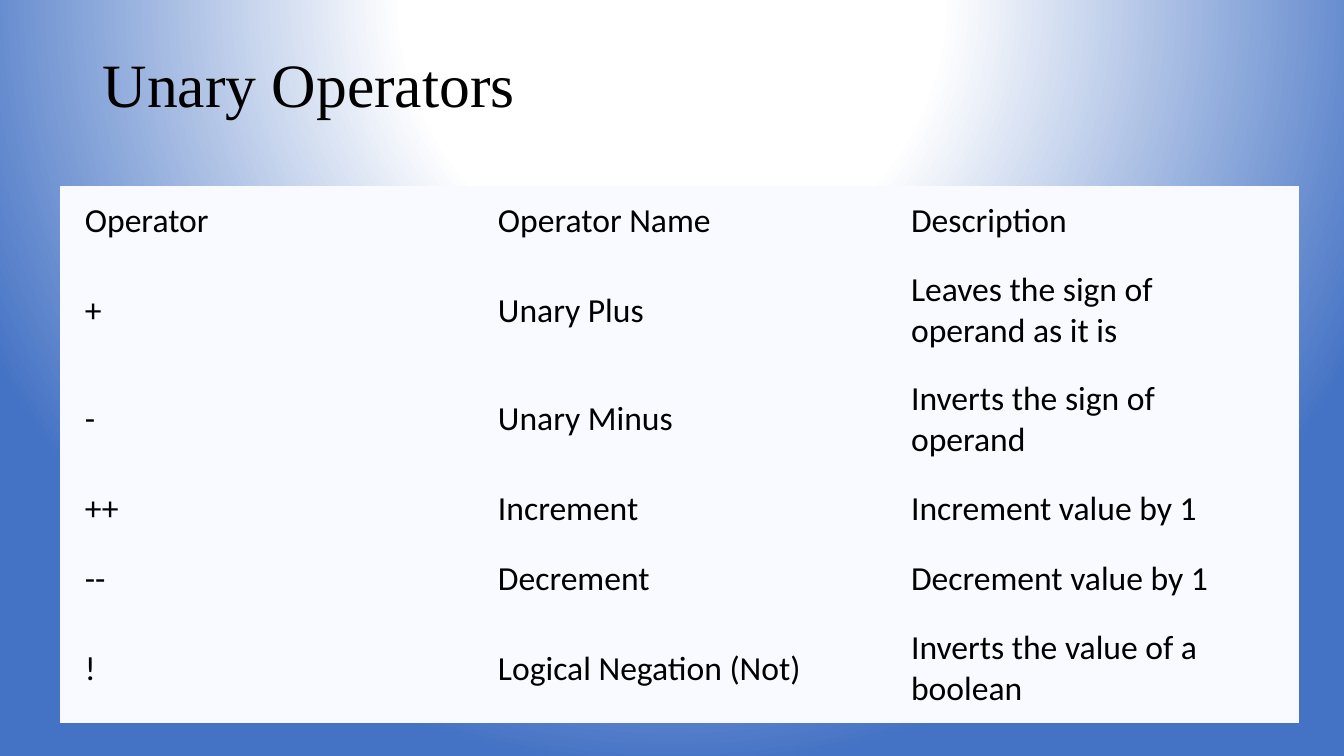
from dataclasses import dataclass

from pptx import Presentation
from pptx import oxml
from pptx import util as u
from pptx.dml import color
from pptx.enum import text
from pptx.oxml import ns


@dataclass(frozen=True)
class Theme:
    ink: str = "000000"
    cell: str = "F8FAFF"
    glow: str = "FFFFFF"
    edge: str = "4472C4"
    head: str = "Times New Roman"
    body: str = "Calibri"
    big: int = 44
    mid: int = 24


THEME = Theme()
PLAIN = "{2D5ABB26-0587-4C30-8999-92F81FD0307C}"  # no style, no grid
ROWS = [
    ("Operator", "Operator Name", "Description"),
    ("+", "Unary Plus", "Leaves the sign of operand as it is"),
    ("-", "Unary Minus", "Inverts the sign of operand"),
    ("++", "Increment", "Increment value by 1"),
    ("--", "Decrement", "Decrement value by 1"),
    ("!", "Logical Negation (Not)", "Inverts the value of a boolean"),
]
LOW, TALL = u.Cm(1.77), u.Cm(2.74)
HEIGHTS = [LOW, TALL, TALL, LOW, LOW, TALL]
WIDTH = u.Cm(10.41)


def apply(item, form):
    for name, value in form.items():
        setattr(item, name, value)


def style(par, face, size):
    apply(par.font, {"name": face, "size": u.Pt(size), "bold": False})
    par.font.color.rgb = color.RGBColor.from_string(THEME.ink)
    par.alignment = text.PP_ALIGN.LEFT


# Background: circular glow centred above the slide
def add_glow(slide):
    slide.background.fill.gradient()
    stops = "".join(
        f'<a:gs pos="{pos * 1000}"><a:srgbClr val="{tint}"/></a:gs>'
        for pos, tint in ((0, THEME.glow), (35, THEME.glow), (100, THEME.edge))
    )
    glow = oxml.parse_xml(
        f'<a:gradFill {ns.nsdecls("a")} rotWithShape="1">'
        f'<a:gsLst>{stops}</a:gsLst><a:path path="circle">'
        '<a:fillToRect l="50000" t="-80000" r="50000" b="180000"/>'
        "</a:path></a:gradFill>"
    )
    old = next(slide.element.iter(ns.qn("a:gradFill")))
    old.getparent().replace(old, glow)


# Title placeholder
def add_title(slide, words):
    title = slide.shapes.title
    apply(title, {"left": u.Cm(2.33), "top": u.Cm(1.02),
                  "width": u.Cm(29.21), "height": u.Cm(2.39)})
    frame = title.text_frame
    frame.text = words
    apply(frame, {"vertical_anchor": text.MSO_ANCHOR.MIDDLE,
                  "auto_size": text.MSO_AUTO_SIZE.NONE, "word_wrap": True})
    par = frame.paragraphs[0]
    par.line_spacing = 0.9
    style(par, THEME.head, THEME.big)


# Operator table
def fill_cell(cell, words):
    cell.text = words
    apply(cell, {"vertical_anchor": text.MSO_ANCHOR.MIDDLE,
                 "margin_left": u.Cm(0.63), "margin_right": u.Cm(0.63),
                 "margin_top": u.Cm(0.3), "margin_bottom": u.Cm(0.3)})
    cell.fill.solid()
    cell.fill.fore_color.rgb = color.RGBColor.from_string(THEME.cell)
    style(cell.text_frame.paragraphs[0], THEME.body, THEME.mid)


def add_grid(slide, rows):
    cols = len(rows[0])
    frame = slide.shapes.add_table(len(rows), cols, u.Cm(1.51), u.Cm(4.69),
                                   WIDTH * cols, sum(HEIGHTS))
    table = frame.table
    apply(table, {"first_row": False, "horz_banding": False})
    next(frame.element.iter(ns.qn("a:tableStyleId"))).text = PLAIN
    for col in table.columns:
        col.width = WIDTH
    for i, (row, height) in enumerate(zip(rows, HEIGHTS)):
        table.rows[i].height = height
        for j, words in enumerate(row):
            fill_cell(table.cell(i, j), words)


def main():
    deck = Presentation()
    apply(deck, {"slide_width": u.Cm(33.87), "slide_height": u.Cm(19.05)})
    slide = deck.slides.add_slide(deck.slide_layouts.get_by_name("Title Only"))
    add_glow(slide)
    add_title(slide, "Unary Operators")
    add_grid(slide, ROWS)
    deck.save("out.pptx")


if __name__ == "__main__":
    main()
